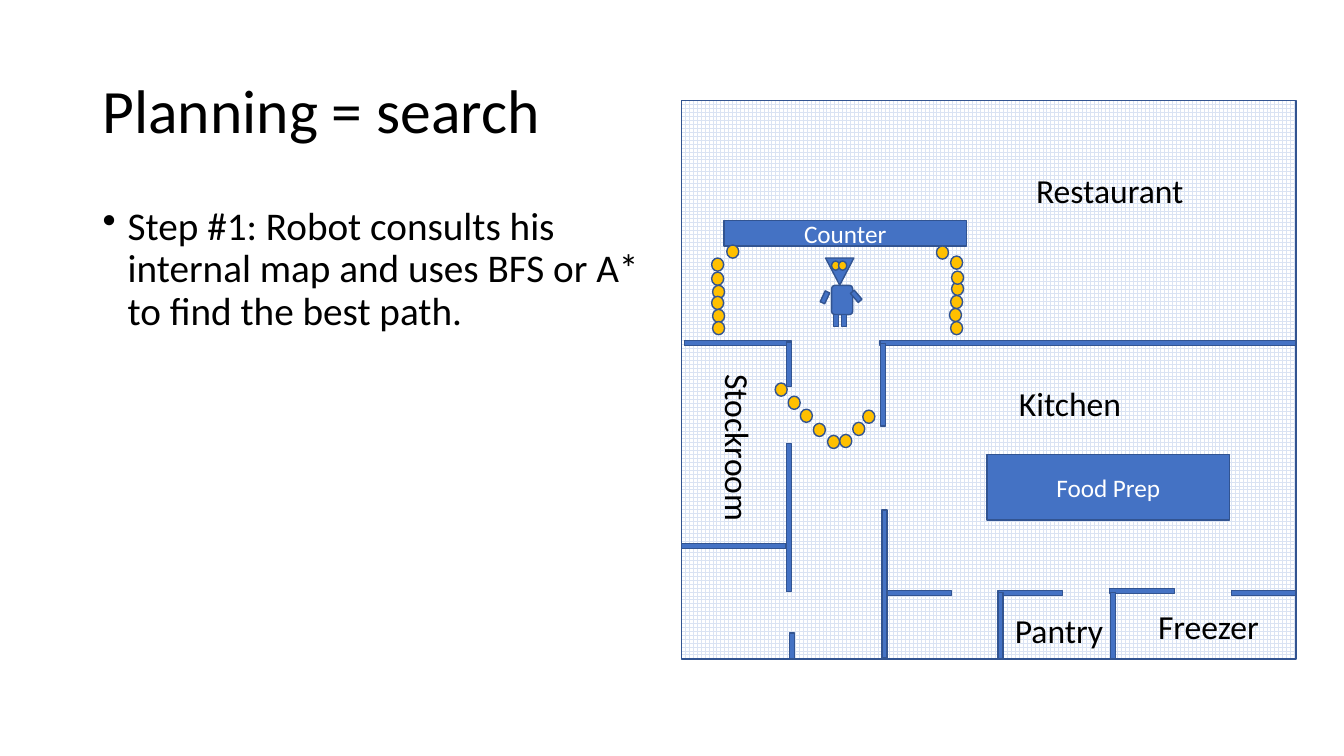
"""Build the slide of a robot planning its path on a restaurant floor map."""
from dataclasses import dataclass
from itertools import chain

import lxml.etree
import pptx
import pptx.dml.color
import pptx.enum.dml
import pptx.enum.shapes
import pptx.enum.text
import pptx.oxml.ns
import pptx.shapes.autoshape
import pptx.shapes.shapetree
import pptx.text.text
import pptx.util

Pt = pptx.util.Pt
Shapes = pptx.shapes.shapetree.SlideShapes | pptx.shapes.shapetree.GroupShapes
KIND = pptx.enum.shapes.MSO_SHAPE
ANCHOR = pptx.enum.text.MSO_ANCHOR

COLORS = {
    "text": "000000",
    "inverse": "FFFFFF",
    "wall": "4472C4",
    "outline": "325491",
    "coin": "FFC000",
    "grid": "DAE3F3",
    "floor": "FFFFFF",
}
WALL_THICKNESS = 3.6
COIN_SIZE = (8.6, 9.4)
LIMB_SIZE = (3.6, 8.6)
EYE_SIZE = (5.8, 6.5)


@dataclass(frozen=True)
class Piece:
    left: float
    top: float
    width: float
    height: float
    kind: KIND = KIND.RECTANGLE
    color: str = "wall"
    rotation: float = 0
    caption: str = ""


@dataclass(frozen=True)
class Label:
    text: str
    left: float
    top: float
    width: float
    height: float = 36
    size: float = 24
    rotation: float = 0
    wraps: bool = False
    anchor: ANCHOR = ANCHOR.TOP


@dataclass(frozen=True)
class Wall:
    left: float
    top: float
    length: float
    upright: bool = False


FLOOR = Piece(486.7, 72, 439.2, 398.9)
ROBOT = [
    Piece(589.7, 184.3, 20.2, 19.4, KIND.ISOSCELES_TRIANGLE, rotation=180),
    *(Piece(left, 186.5, *EYE_SIZE, KIND.OVAL, "coin") for left in (594, 599)),
    Piece(594, 203.8, 15.1, 20.9, KIND.ROUNDED_RECTANGLE),
    *(Piece(left, 224.6, *LIMB_SIZE) for left in (595.4, 601.2)),
    Piece(609.8, 207.4, *LIMB_SIZE, rotation=319.4),
    Piece(587.5, 208.1, *LIMB_SIZE, rotation=24.9),
]
FURNITURE = [
    Piece(517, 157.7, 173.5, 18, caption="Counter"),
    Piece(704.9, 324.7, 173.5, 46.8, caption="Food Prep"),
]
WALLS = [
    Wall(488.9, 243.4, 76.3),
    Wall(628.6, 243.4, 296.6),
    Wall(628.9, 245.2, 59, upright=True),
    Wall(630, 364.3, 105.8, upright=True),
    Wall(633.6, 421.9, 46.1),
    Wall(712.8, 421.9, 46.1),
    Wall(792.7, 420.5, 46.1),
    Wall(712.8, 423.4, 46.8, upright=True),
    Wall(793.4, 423.4, 46.8, upright=True),
    Wall(879.8, 421.9, 46.1),
    Wall(561.6, 316.8, 105.8, upright=True),
    Wall(486.7, 388.1, 74.9),
    Wall(562, 244.4, 31.7, upright=True),
    Wall(563.8, 452.2, 18, upright=True),
]
ROOMS = [
    Label("Kitchen", 720.7, 270, 88.6),
    Label("Restaurant", 733, 118.1, 121),
    Label("Freezer", 820.1, 429.1, 87.1),
    Label("Pantry", 717.8, 432, 78.5),
    Label("Stockroom", 467.3, 302.4, 120.2, rotation=90),
]
COIN_TRAILS = {
    "left of counter": [(508.3, 184.3), (508.3, 194.4), (509, 203.8), (508.3, 211.7),
                        (509, 221), (509, 229.7), (519.1, 175)],
    "right of counter": [(679, 229.7), (678.2, 220.3), (679, 211), (679.7, 201.6),
                         (679.7, 193.7), (679, 182.9), (668.9, 175.7)],
    "kitchen doorway": [(553.7, 273.6), (563, 283), (571.7, 292.3), (581, 302.4),
                        (591.1, 311), (599.8, 310.3), (609.1, 301.7), (616.3, 293)],
}
TITLE = Label("Planning = search", 66.2, 28.8, 362.9, 104.4, 44, wraps=True, anchor=ANCHOR.MIDDLE)
STEP = Label("Step #1: Robot consults his internal map and uses BFS or A* to find the best path.",
             66.2, 144, 408.2, 342.7, 28, wraps=True)


def rgb(name: str) -> pptx.dml.color.RGBColor:
    return pptx.dml.color.RGBColor.from_string(COLORS[name])


def style_font(paragraph: pptx.text.text._Paragraph, size: float, color: str) -> None:
    paragraph.font.name = "Calibri"
    paragraph.font.size = Pt(size)
    paragraph.font.color.rgb = rgb(color)


def draw_piece(shapes: Shapes, piece: Piece) -> pptx.shapes.autoshape.Shape:
    shape = shapes.add_shape(piece.kind, Pt(piece.left), Pt(piece.top), Pt(piece.width), Pt(piece.height))
    shape.rotation = piece.rotation
    shape.shadow.inherit = False
    shape.fill.solid()
    shape.fill.fore_color.rgb = rgb(piece.color)
    shape.line.color.rgb = rgb("outline")
    shape.line.width = Pt(1)
    if piece.caption:
        shape.text_frame.text = piece.caption
        shape.text_frame.vertical_anchor = ANCHOR.MIDDLE
        paragraph = shape.text_frame.paragraphs[0]
        paragraph.alignment = pptx.enum.text.PP_ALIGN.CENTER
        style_font(paragraph, 18, "inverse")
    return shape


def draw_wall(shapes: Shapes, wall: Wall) -> None:
    size = (WALL_THICKNESS, wall.length) if wall.upright else (wall.length, WALL_THICKNESS)
    draw_piece(shapes, Piece(wall.left, wall.top, *size))


def draw_label(shapes: Shapes, label: Label) -> pptx.text.text._Paragraph:
    box = shapes.add_textbox(Pt(label.left), Pt(label.top), Pt(label.width), Pt(label.height))
    box.rotation = label.rotation
    frame = box.text_frame
    frame.text = label.text
    frame.word_wrap = label.wraps
    frame.vertical_anchor = label.anchor
    paragraph = frame.paragraphs[0]
    if label.wraps:
        paragraph.line_spacing = 0.9
    else:
        frame.auto_size = pptx.enum.text.MSO_AUTO_SIZE.SHAPE_TO_FIT_TEXT
    style_font(paragraph, label.size, "text")
    return paragraph


def add_bullet(paragraph: pptx.text.text._Paragraph) -> None:
    paragraph.space_before = Pt(10)
    properties = paragraph._p.get_or_add_pPr()
    properties.set("marL", str(Pt(18)))
    properties.set("indent", str(Pt(-18)))
    bullet = lxml.etree.Element(pptx.oxml.ns.qn("a:buChar"), char="•")
    properties.find(pptx.oxml.ns.qn("a:defRPr")).addprevious(bullet)


def draw_floor(shapes: Shapes) -> None:
    fill = draw_piece(shapes, FLOOR).fill
    fill.patterned()
    fill.pattern = pptx.enum.dml.MSO_PATTERN.LARGE_GRID
    fill.fore_color.rgb = rgb("grid")
    fill.back_color.rgb = rgb("floor")


def main() -> None:
    deck = pptx.Presentation()
    deck.slide_width, deck.slide_height = Pt(960), Pt(540)
    shapes = deck.slides.add_slide(deck.slide_layouts[6]).shapes
    draw_label(shapes, TITLE)
    add_bullet(draw_label(shapes, STEP))
    draw_floor(shapes)
    robot = shapes.add_group_shape().shapes
    for piece in ROBOT:
        draw_piece(robot, piece)
    for piece in FURNITURE:
        draw_piece(shapes, piece)
    for wall in WALLS:
        draw_wall(shapes, wall)
    for room in ROOMS:
        draw_label(shapes, room)
    for left, top in chain.from_iterable(COIN_TRAILS.values()):
        draw_piece(shapes, Piece(left, top, *COIN_SIZE, KIND.OVAL, "coin"))
    deck.save("out.pptx")


if __name__ == "__main__":
    main()
